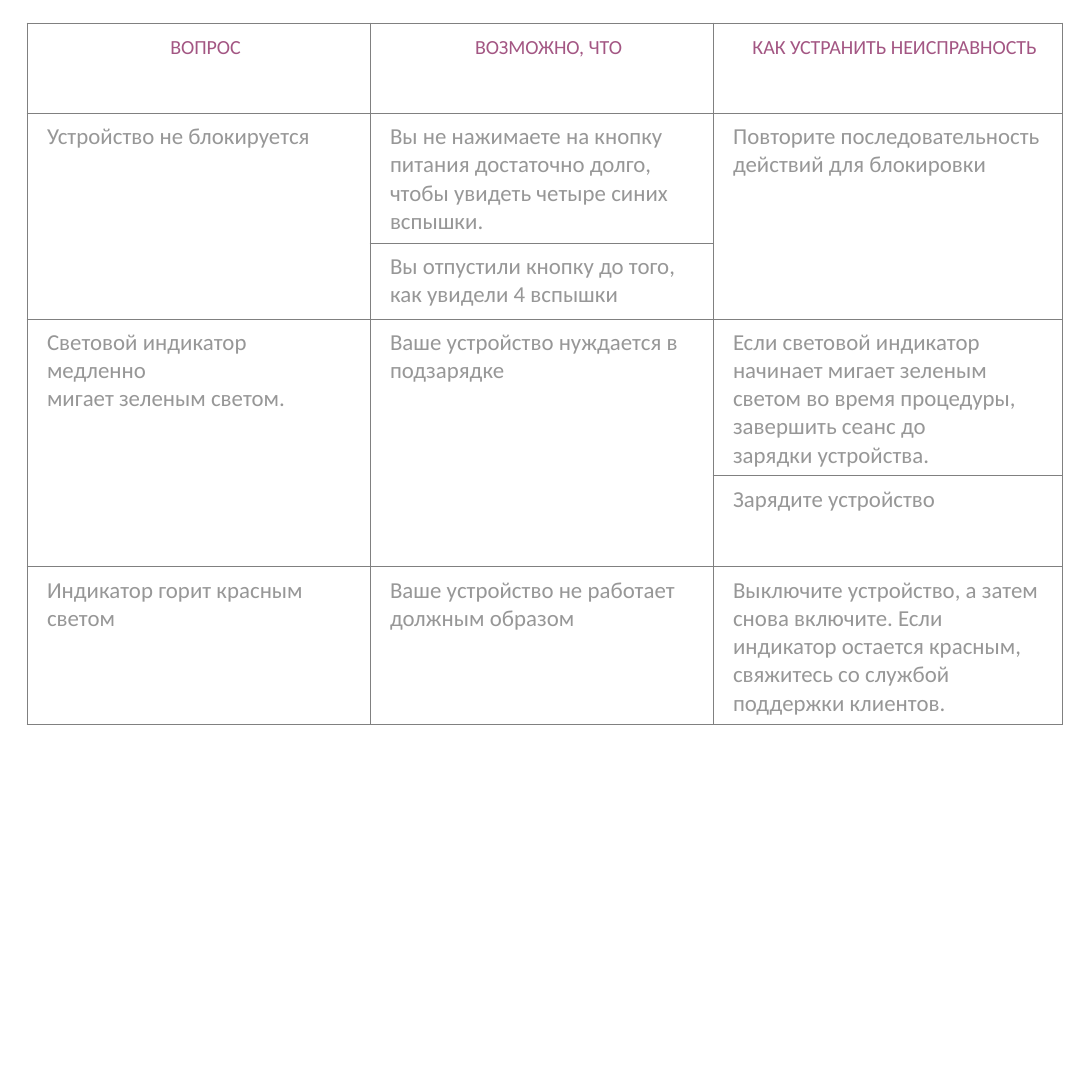
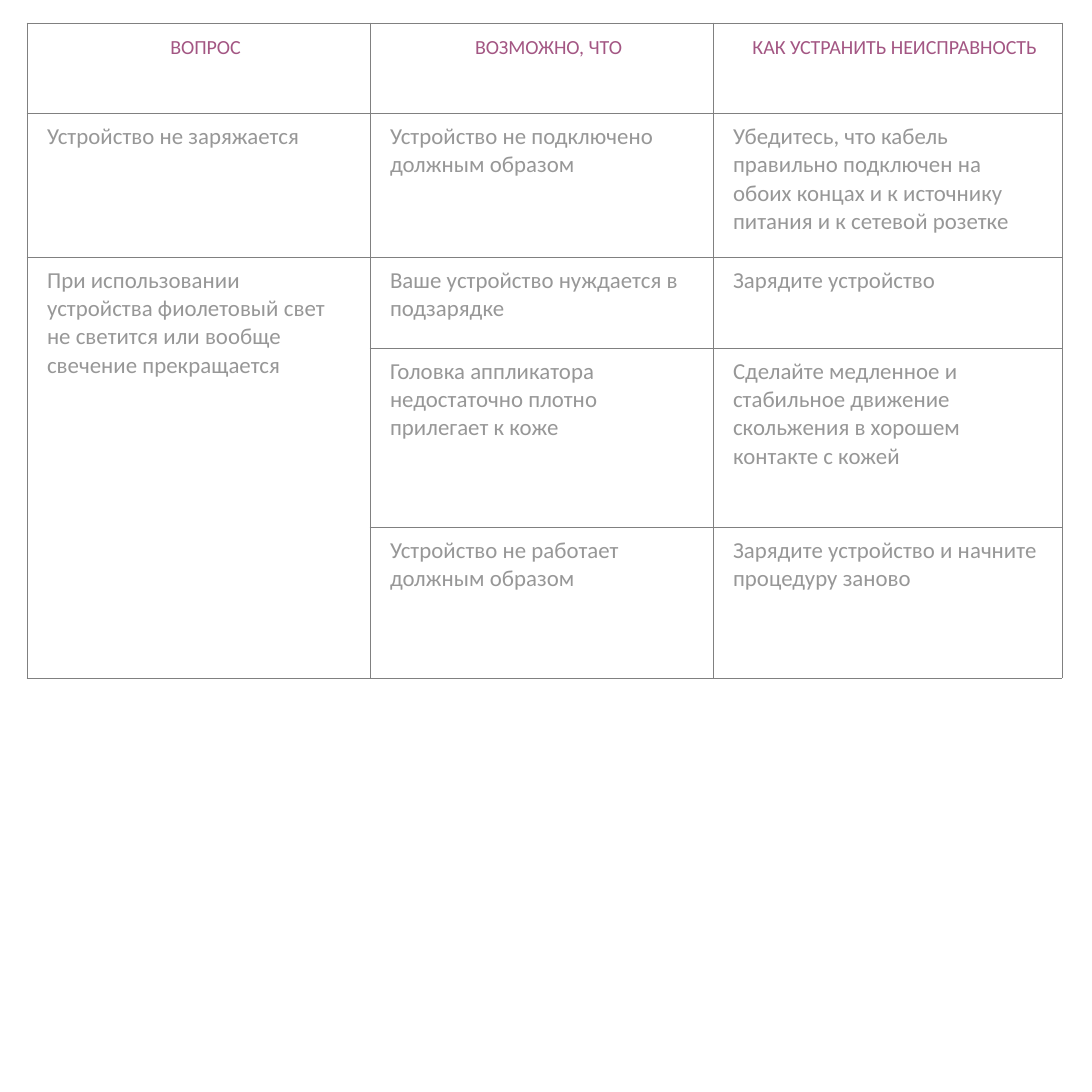
import pptx
import pptx.dml.color
import pptx.enum.text
import pptx.util
from lxml import etree
from pptx.oxml.ns import qn

PX = 4447  # EMU in one px
SIDE = 1092
LEFT, TOP = 27, 23
COLUMNS = (343, 343, 349)
HEADER_HEIGHT = 90
HEADER = ("ВОПРОС", "ВОЗМОЖНО, ЧТО", "КАК УСТРАНИТЬ НЕИСПРАВНОСТЬ")
FONT = "Calibri"
PURPLE, GREY, BORDER = "A35683", "979797", "808080"
BORDER_WIDTH = pptx.util.Pt(0.25)

# Each row: height, then its cells; None continues the cell above.
LOCKING_AND_LIGHTS = [
    (130, ("Устройство не блокируется",
           "Вы не нажимаете на кнопку питания достаточно долго, "
           "чтобы увидеть четыре синих\nвспышки.",
           "Повторите последовательность действий для блокировки")),
    (76, (None, "Вы отпустили кнопку до того, как увидели 4 вспышки", None)),
    (157, ("Световой индикатор медленно\nмигает зеленым светом.",
           "Ваше устройство нуждается в подзарядке",
           "Если световой индикатор начинает мигает зеленым светом "
           "во время процедуры,\nзавершить сеанс до\nзарядки устройства.")),
    (91, (None, None, "Зарядите устройство")),
    (158, ("Индикатор горит красным светом",
           "Ваше устройство не работает должным образом",
           "Выключите устройство, а затем\nснова включите. Если индикатор "
           "остается красным, свяжитесь со службой поддержки клиентов.")),
]
CHARGING_AND_USE = [
    (144, ("Устройство не заряжается",
           "Устройство не подключено должным образом",
           "Убедитесь, что кабель правильно подключен на обоих концах "
           "и к источнику питания и к сетевой розетке")),
    (91, ("При использовании устройства фиолетовый свет не светится "
          "или вообще свечение прекращается",
          "Ваше устройство нуждается в подзарядке",
          "Зарядите устройство")),
    (179, (None,
           "Головка аппликатора недостаточно плотно прилегает к коже",
           "Сделайте медленное и стабильное движение скольжения "
           "в хорошем контакте с кожей")),
    (151, (None,
           "Устройство не работает должным образом",
           "Зарядите устройство и начните процедуру заново")),
]


def color(value):
    return pptx.dml.color.RGBColor.from_string(value)


def add_borders(cell):
    properties = cell._tc.get_or_add_tcPr()
    for side in ("lnL", "lnR", "lnT", "lnB"):
        line = etree.SubElement(properties, qn("a:" + side), w=str(BORDER_WIDTH))
        fill = etree.SubElement(line, qn("a:solidFill"))
        etree.SubElement(fill, qn("a:srgbClr"), val=BORDER)


def style_cell(cell, is_header):
    add_borders(cell)
    cell.fill.background()
    cell.margin_left = cell.margin_right = 20 * PX
    cell.margin_top, cell.margin_bottom = 10 * PX, 6 * PX
    for para in cell.text_frame.paragraphs:
        para.font.name = FONT
        para.font.size = pptx.util.Pt(7 if is_header else 8)
        para.font.bold = False
        para.font.color.rgb = color(PURPLE if is_header else GREY)
        if is_header:
            para.alignment = pptx.enum.text.PP_ALIGN.CENTER
            para.line_spacing = 1.1
            para._p.get_or_add_pPr().set("marL", str(14 * PX))


def add_fault_table(page, faults):
    rows = [(HEADER_HEIGHT, HEADER)] + faults
    height = sum(row[0] for row in rows)
    frame = page.shapes.add_table(len(rows), len(COLUMNS), LEFT * PX, TOP * PX,
                                  sum(COLUMNS) * PX, height * PX)
    table = frame.table
    table.first_row = table.horz_banding = False
    for column, width in zip(table.columns, COLUMNS):
        column.width = width * PX
    for r, (row_height, texts) in enumerate(rows):
        table.rows[r].height = row_height * PX
        for c, text in enumerate(texts):
            cell = table.cell(r, c)
            cell.text = text or ""
            style_cell(cell, r == 0)
    for c in range(len(COLUMNS)):
        start = 0
        for r in range(1, len(rows) + 1):
            if r < len(rows) and rows[r][1][c] is None:
                continue
            if r - start > 1:
                table.cell(start, c).merge(table.cell(r - 1, c))
            start = r


def main():
    deck = pptx.Presentation()
    deck.slide_width = deck.slide_height = SIDE * PX
    for faults in (LOCKING_AND_LIGHTS, CHARGING_AND_USE):
        page = deck.slides.add_slide(deck.slide_layouts[6])
        add_fault_table(page, faults)
    deck.save("out.pptx")


if __name__ == "__main__":
    main()
